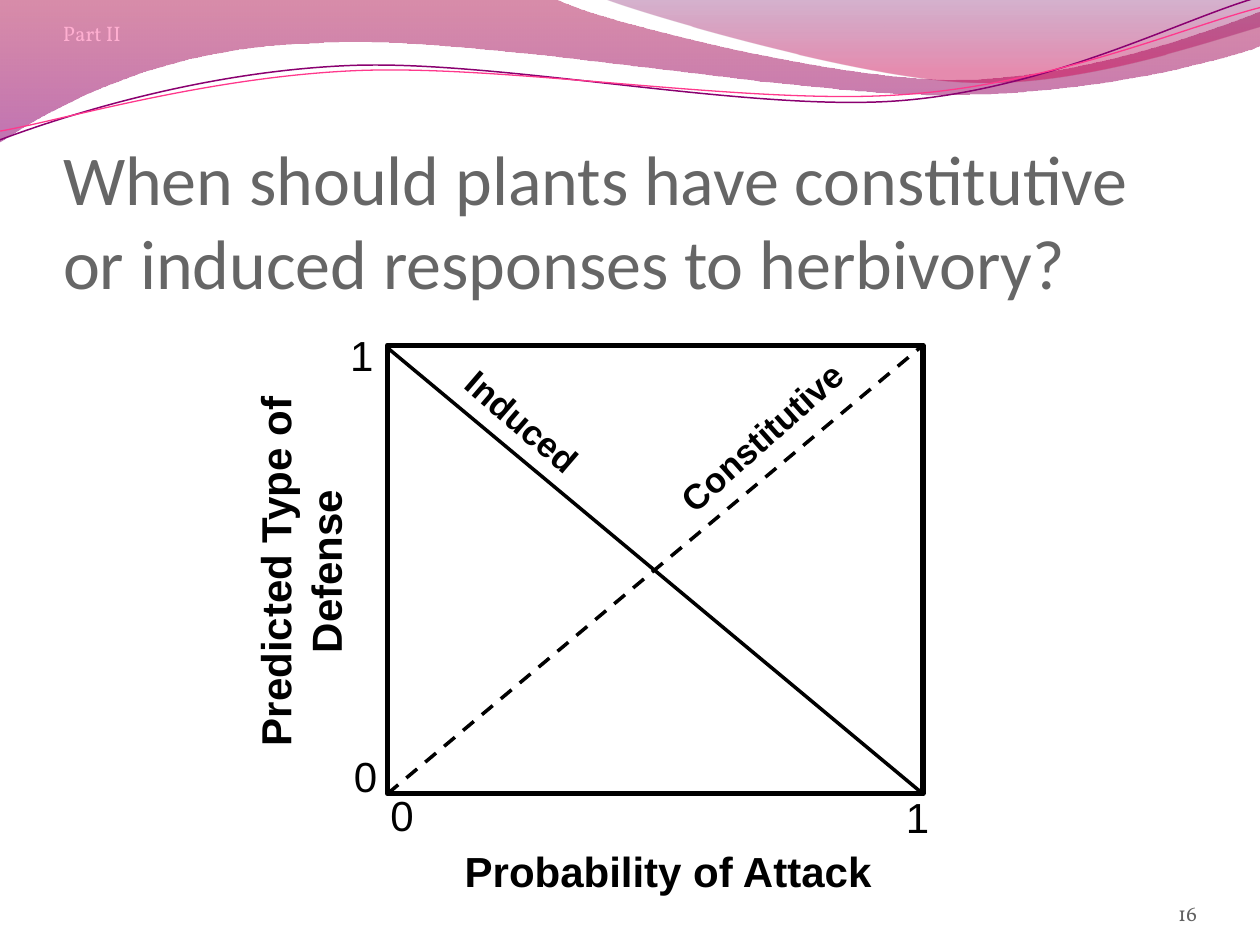
from math import cos, radians, sin
from pptx import Presentation
from pptx.dml.color import RGBColor
from pptx.enum.dml import MSO_LINE
from pptx.enum.shapes import MSO_CONNECTOR, MSO_SHAPE
from pptx.enum.text import MSO_ANCHOR, MSO_AUTO_SIZE, PP_ALIGN
from pptx.util import Inches, Pt
from lxml.etree import SubElement
from pptx.oxml.ns import qn

C = {"ink": "000000", "title": "666666", "number": "616161", "part": "FFAFD1",
     "crimson": "A90042", "purple": "8E0073", "plum": "73005E", "rose": "C9004F",
     "violet": "8A0070", "pink": "FF388C"}
C = {name: RGBColor.from_string(value) for name, value in C.items()}

prs = Presentation()
prs.slide_width, prs.slide_height = Inches(10), Inches(7.5)
col, row = prs.slide_width / 100, prs.slide_height / 75
s = prs.slides.add_slide(prs.slide_layouts[5])


def add_wave(shapes, start, curves, closed):
    pts = [(round(x * col), round(y * row)) for x, y in [start] + sum(curves, [])]
    fb = shapes.build_freeform(*pts[0])
    fb.add_line_segments(pts[1:], close=closed)
    sp = fb.convert_to_shape()
    sp.shadow.inherit = False
    segments = iter(list(sp._element.iter(qn("a:lnTo"))))
    for curve in curves:
        segment = next(segments)
        if len(curve) == 3:
            bezier = SubElement(segment.getparent(), qn("a:cubicBezTo"))
            segment.addprevious(bezier)
            bezier.append(segment[0])
            segment.getparent().remove(segment)
            for segment in (next(segments), next(segments)):
                bezier.append(segment[0])
                segment.getparent().remove(segment)
    return sp


def add_text(box, text, size, font, color, bold=False, align=PP_ALIGN.LEFT, rot=0, wrap=False):
    x, y, w, h = box
    sp = s.shapes.add_textbox(round(x * col), round(y * row), round(w * col), round(h * row))
    sp.rotation = rot
    tf = sp.text_frame
    tf.word_wrap = wrap
    tf.auto_size = MSO_AUTO_SIZE.SHAPE_TO_FIT_TEXT
    p = tf.paragraphs[0]
    p.alignment = align
    r = p.add_run()
    r.text = text
    r.font.size, r.font.name, r.font.bold = Pt(size), font, bold
    r.font.color.rgb = C[color]
    return tf


bands = [
    ((0, 0), [[(44, -0.1)], [(47.6, 1.7), (66.4, 6.3), (75.8, 6.3)],
              [(85.3, 6.3), (95.8, 2.6), (100, 0.9)], [(100.1, 3.6)],
              [(98.3, 4.4), (87, 7.6), (74.6, 7.5)], [(62.2, 7.5), (38.2, 2.8), (25.7, 3.4)],
              [(12.9, 3.6), (4.6, 8.3), (-0.1, 11.3)]],
     [("crimson", 0, 45), ("purple", 1, 55)]),
    ((47.9, -0.1), [[(50.9, 1.1), (68.2, 6.2), (76.9, 6.5)],
                    [(85.6, 6.9), (96.1, 3.2), (100, 2.1)], [(100, 0)]],
     [("plum", 0, 30), ("rose", 0.8, 45)]),
]
for start, curves, stops in bands:
    sp = add_wave(s.shapes, start, curves, True)
    sp.line.fill.background()
    sp.fill.gradient()
    sp.fill.gradient_angle = 270
    for stop, (color, position, alpha) in zip(sp.fill.gradient_stops, stops):
        stop.color.rgb = C[color]
        stop.position = position
    for clr, (color, position, alpha) in zip(sp._element.spPr.iter(qn("a:srgbClr")), stops):
        SubElement(clr, qn("a:alpha")).set("val", str(alpha * 1000))

strands = [
    ((0, 11.1), [[(4.8, 9.3), (15.8, 5.7), (27.7, 5.2)], [(39.5, 4.7), (59.3, 8.9), (71.3, 8)],
                 [(83.3, 7.1), (93.8, 1.5), (99.8, -0.2)]], 5.75, "violet", 0.85),
    ((0, 10.4), [[(4.7, 9.6), (16.4, 6.1), (28.3, 5.6)], [(40.3, 5.1), (59.7, 8.4), (71.7, 7.5)],
                 [(83.6, 6.7), (94.1, 2.1), (100, 0.6)]], 5.9, "pink", 0.75),
]
tilt = 2.7
ct, st = cos(radians(tilt)), sin(radians(tilt))
group = s.shapes.add_group_shape()
for start, curves, mid, color, width in strands:
    level = [[(49.9 + (x - 49.9) * ct - (y - mid) * st, mid + (x - 49.9) * st + (y - mid) * ct)
              for x, y in curve] for curve in [[start]] + curves]
    sp = add_wave(group.shapes, level[0][0], level[1:], False)
    sp.rotation = 360 - tilt
    sp.fill.background()
    sp.line.color.rgb = C[color]
    sp.line.width = Pt(width)

title = s.shapes.title
s.shapes._spTree.append(title._element)
title.left, title.top = round(5 * col), round(11.6 * row)
title.width, title.height = round(90 * col), round(12.5 * row)
tf = title.text_frame
tf.auto_size = MSO_AUTO_SIZE.NONE
tf.word_wrap = True
tf.vertical_anchor = MSO_ANCHOR.BOTTOM
tf.margin_left = tf.margin_right = tf.margin_bottom = 0
tf.margin_top = Inches(0.05)
p = tf.paragraphs[0]
p.alignment = PP_ALIGN.LEFT
r = p.add_run()
r.text = "When should plants have constitutive or induced responses to herbivory?"
r.font.size, r.font.name = Pt(40), "Calibri"
r.font.color.rgb = C["title"]

left, right, top, bottom = round(30.75 * col), round(73.25 * col), round(27.4 * row), round(63 * row)
frame = s.shapes.add_shape(MSO_SHAPE.RECTANGLE, left, top, right - left, bottom - top)
frame.shadow.inherit = False
frame.fill.background()
frame.line.color.rgb = C["ink"]
frame.line.width = Pt(3)

for y1, y2, dash in [(round(27.6 * row), bottom, None), (bottom, top, MSO_LINE.DASH)]:
    line = s.shapes.add_connector(MSO_CONNECTOR.STRAIGHT, left, y1, right, y2)
    line.line.color.rgb = C["ink"]
    line.line.width = Pt(2)
    line.line.dash_style = dash
    SubElement(line._element.spPr, qn("a:effectLst"))

add_text((35.9, 66.6, 34.6, 5), "Probability of Attack", 24, "Arial", "ink", True)
add_text((4.5, 40.8, 38.7, 9.1), "Predicted Type of Defense", 24, "Arial", "ink", True,
         PP_ALIGN.CENTER, 270, True)
for x, y, tick in [(30, 62.2, "0"), (27.1, 59.1, "0"), (70.9, 62.3, "1"), (26.8, 25.7, "1")]:
    add_text((x, y, 3.9, 5), tick, 24, "Arial", "ink")
add_text((35.1, 31.3, 12.8, 4.4), "Induced", 20, "Arial", "ink", True, rot=40.7)
add_text((51.4, 32.4, 18.2, 4.4), "Constitutive", 20, "Arial", "ink", True, rot=318.3)

for box, text, color, align in [((86.7, 69.5, 8.3, 4), "16", "number", PP_ALIGN.RIGHT),
                                ((5, -0.4, 36.7, 4), "Part II", "part", PP_ALIGN.LEFT)]:
    tf = add_text(box, text, 12, "Vollkorn", color, align=align, wrap=True)
    tf.auto_size = MSO_AUTO_SIZE.NONE
    tf.vertical_anchor = MSO_ANCHOR.BOTTOM
    tf.margin_left = tf.margin_right = tf.margin_top = tf.margin_bottom = 0

prs.save("out.pptx")
